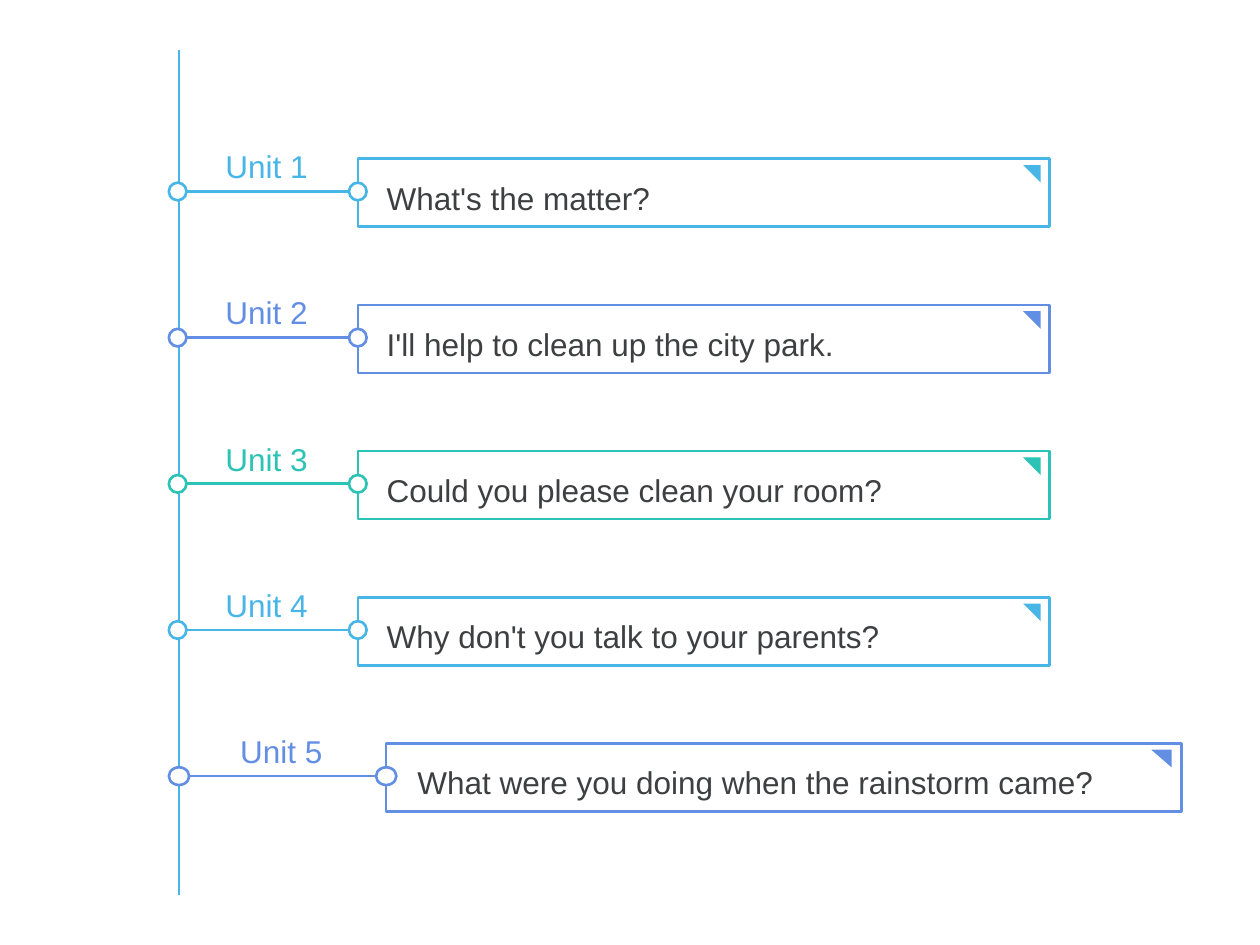
from dataclasses import dataclass

from lxml import etree
from pptx import Presentation
from pptx import util as u
from pptx.dml.color import RGBColor
from pptx.enum import shapes, text
from pptx.oxml.ns import qn


@dataclass(frozen=True)
class Theme:
    sky: str = "47B6E7"
    blue: str = "628EE3"
    teal: str = "2BC3B5"
    ink: str = "3D3F41"
    paper: str = "FFFFFF"
    font: str = "Arial"
    size: int = 18
    line: float = 1.5
    spacing: float = 1.3


class Board:
    """Holds the theme, the slide and the row group being drawn."""

    def __init__(self, slide, theme):
        self.slide = slide
        self.theme = theme
        self.target = slide.shapes

    def start_group(self):
        self.target = self.slide.shapes.add_group_shape().shapes

    def shape(self, kind, x, y, w, h, fill, line=None, rotation=0):
        sp = self.target.add_shape(
            kind, u.Inches(x), u.Inches(y), u.Inches(w), u.Inches(h))
        sp.shadow.inherit = False
        sp.rotation = rotation
        sp.fill.solid()
        sp.fill.fore_color.rgb = RGBColor.from_string(fill)
        if line:
            sp.line.color.rgb = RGBColor.from_string(line)
            sp.line.width = u.Pt(self.theme.line)
        else:
            sp.line.fill.background()

    def line(self, x1, y1, x2, y2, color):
        cxn = self.target.add_connector(
            shapes.MSO_CONNECTOR.STRAIGHT,
            u.Inches(x1), u.Inches(y1), u.Inches(x2), u.Inches(y2))
        cxn.line.color.rgb = RGBColor.from_string(color)
        cxn.line.width = u.Pt(self.theme.line)
        etree.SubElement(cxn._element.spPr, qn("a:effectLst"))

    def text(self, x, y, w, h, words, color, align=text.PP_ALIGN.LEFT):
        tf = self.target.add_textbox(
            u.Inches(x), u.Inches(y), u.Inches(w), u.Inches(h)).text_frame
        tf.word_wrap = True
        tf.text = words
        p = tf.paragraphs[0]
        p.alignment = align
        p.line_spacing = self.theme.spacing
        font = p.runs[0].font
        font.name = self.theme.font
        font.size = u.Pt(self.theme.size)
        font.color.rgb = RGBColor.from_string(color)

    def unit_row(self, top, label, title, color, stretch):
        """One unit; stretch widens the row from its left edge."""
        kinds = shapes.MSO_SHAPE
        paper = self.theme.paper
        left, dot = 1.34, 0.14
        axis = top + 0.26

        def across(offset):
            return left + offset * stretch

        self.start_group()
        # Title box with its corner mark
        self.shape(kinds.RECTANGLE, across(1.5), top, 5.49 * stretch, 0.54,
                   paper, color)
        self.shape(kinds.RIGHT_TRIANGLE, across(6.78), top + 0.05,
                   dot * stretch, dot, color, rotation=180)
        # Branch with a dot at each end
        self.line(across(1.5), axis, left, axis, color)
        for offset in (0, 1.43):
            self.shape(kinds.OVAL, across(offset), axis - dot / 2,
                       dot * stretch, dot, paper, color)
        # Wording
        self.text(across(1.63), top + 0.02, 4.91 * stretch, 0.45, title,
                  self.theme.ink)
        self.text(1.33, top - 0.23, 1.57 * stretch, 0.45, label, color,
                  text.PP_ALIGN.CENTER)


def main():
    theme = Theme()
    prs = Presentation()
    prs.slide_width, prs.slide_height = u.Inches(10), u.Inches(7.5)
    board = Board(prs.slides.add_slide(prs.slide_layouts[6]), theme)

    # Trunk
    board.line(1.42, 0.4, 1.42, 7.1, theme.sky)

    # Units: title, colour, horizontal stretch
    units = [
        ("What's the matter?", theme.sky, 1),
        ("I'll help to clean up the city park.", theme.blue, 1),
        ("Could you please clean your room?", theme.teal, 1),
        ("Why don't you talk to your parents?", theme.sky, 1),
        ("What were you doing when the rainstorm came?", theme.blue, 1.15),
    ]
    for i, (title, color, stretch) in enumerate(units):
        board.unit_row(1.26 + 1.16 * i, f"Unit {i + 1}", title, color, stretch)

    prs.save("out.pptx")


if __name__ == "__main__":
    main()
